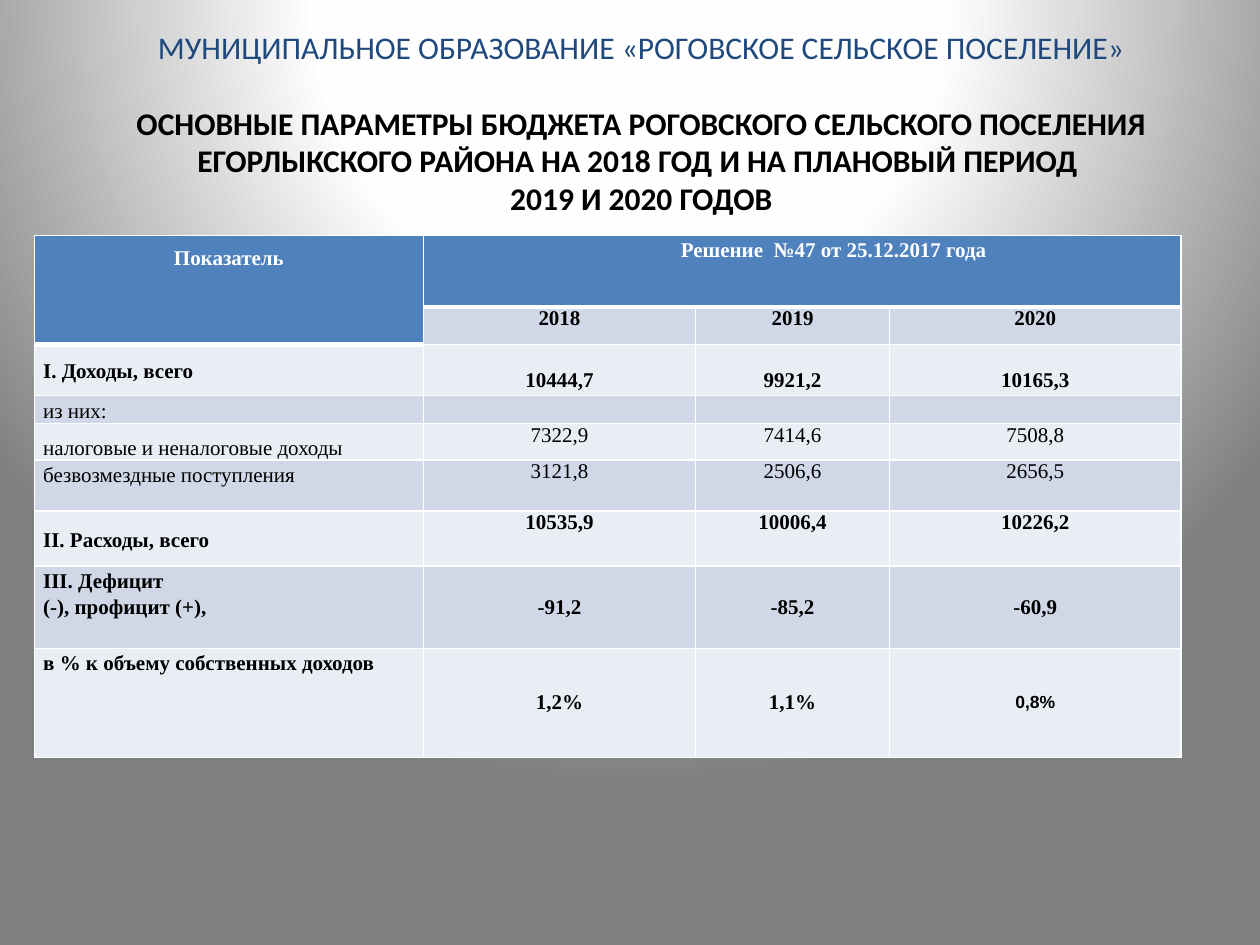
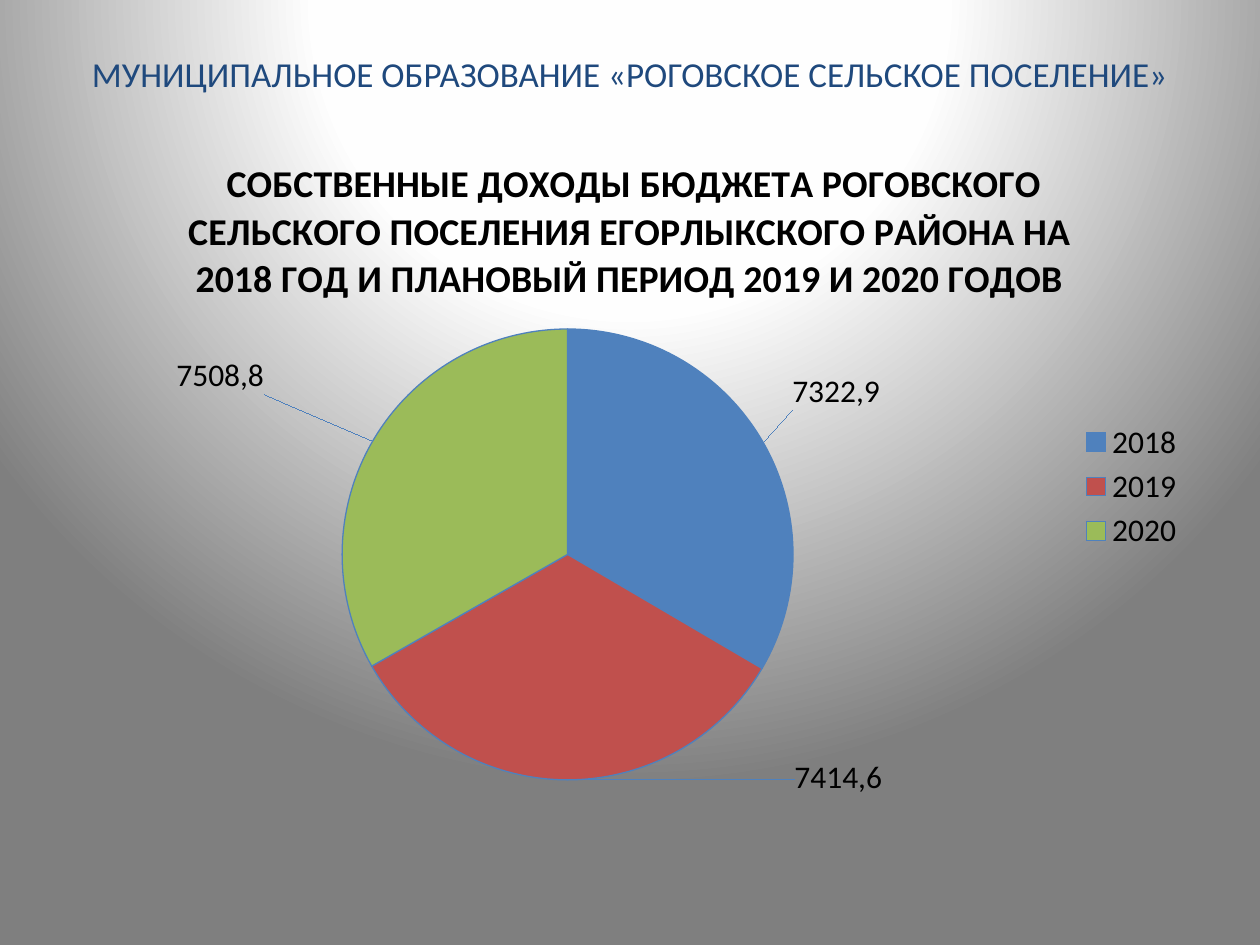
from dataclasses import dataclass

import lxml.etree
import pptx
import pptx.chart.data
import pptx.dml.color
import pptx.enum.chart
import pptx.enum.text
import pptx.oxml
import pptx.oxml.ns
import pptx.util

Pt = pptx.util.Pt
qn = pptx.oxml.ns.qn
Align = pptx.enum.text.PP_ALIGN
Anchor = pptx.enum.text.MSO_ANCHOR

HEX = {
    "navy": "1F497D", "black": "000000", "white": "FFFFFF", "blue": "4F81BD",
    "red": "C0504D", "green": "9BBB59", "band": "D0D8E8", "pale": "E9EDF4",
}
STOPS = ((0, "FFFFFF"), (40, "FEFEFE"), (100, "7F7F7F"))
PLACE = "МУНИЦИПАЛЬНОЕ ОБРАЗОВАНИЕ «РОГОВСКОЕ СЕЛЬСКОЕ ПОСЕЛЕНИЕ»"
BUDGET = (
    "ОСНОВНЫЕ ПАРАМЕТРЫ БЮДЖЕТА РОГОВСКОГО СЕЛЬСКОГО ПОСЕЛЕНИЯ "
    "ЕГОРЛЫКСКОГО РАЙОНА НА 2018 ГОД И НА ПЛАНОВЫЙ ПЕРИОД \v2019 И 2020 ГОДОВ"
)
INCOME = (
    " СОБСТВЕННЫЕ ДОХОДЫ БЮДЖЕТА РОГОВСКОГО СЕЛЬСКОГО ПОСЕЛЕНИЯ "
    "ЕГОРЛЫКСКОГО РАЙОНА НА 2018 ГОД И ПЛАНОВЫЙ ПЕРИОД 2019 И 2020 ГОДОВ"
)
YEARS = ("2018", "2019", "2020")
WIDTHS = (222.3, 155.5, 110.9, 166.5)
HEAD = 41


@dataclass
class Box:
    left: float
    top: float
    width: float
    height: float

    def pts(self) -> tuple:
        return tuple(Pt(v) for v in (self.left, self.top, self.width, self.height))


@dataclass
class Row:
    height: float
    label: str
    vals: tuple = ("", "", "")
    bold: bool = True
    side: Anchor = Anchor.TOP
    mid: Anchor = Anchor.TOP
    pad: float = 0


@dataclass
class Slice:
    year: str
    value: float
    label: str
    color: str
    dx: float
    dy: float


ROWS = (
    Row(21.5, "", YEARS),
    Row(29, "I. Доходы, всего", ("10444,7", "9921,2", "10165,3"), side=Anchor.MIDDLE, pad=13.8),
    Row(16, "из них:", bold=False, side=Anchor.MIDDLE),
    Row(21, "налоговые и неналоговые доходы", ("7322,9", "7414,6", "7508,8"), False, Anchor.BOTTOM),
    Row(29, "безвозмездные поступления", ("3121,8", "2506,6", "2656,5"), False),
    Row(31.5, "II. Расходы, всего", ("10535,9", "10006,4", "10226,2"), side=Anchor.MIDDLE),
    Row(47, "III. Дефицит\n(-), профицит (+),", ("-91,2", "-85,2", "-60,9"), mid=Anchor.MIDDLE),
    Row(62.5, "в % к объему собственных доходов", ("1,2%", "1,1%", "0,8%"), mid=Anchor.MIDDLE),
)
SLICES = (
    Slice("2018", 6847, "7322,9", "blue", 0.02, -0.04),
    Slice("2019", 6818, "7414,6", "red", 0.24, -0.04),
    Slice("2020", 6808, "7508,8", "green", -0.09, -0.06),
)


def rgb(name: str):
    return pptx.dml.color.RGBColor.from_string(HEX[name])


def style(font, size: float, color: str, bold: bool = False, face: str = "Calibri") -> None:
    font.size, font.bold, font.name = Pt(size), bold, face
    font.color.rgb = rgb(color)


def paint(master) -> None:
    stops = "".join(
        f'<a:gs pos="{pos * 1000}"><a:srgbClr val="{tone}"/></a:gs>' for pos, tone in STOPS
    )
    master.background.fill.solid()
    props = master.element.find(".//" + qn("p:bgPr"))
    props.remove(props[0])
    props.insert(0, pptx.oxml.parse_xml(
        f'<a:gradFill {pptx.oxml.ns.nsdecls("a")} rotWithShape="1"><a:gsLst>{stops}</a:gsLst>'
        '<a:path path="circle"><a:fillToRect l="50000" t="-80000" r="50000" b="180000"/>'
        "</a:path></a:gradFill>"
    ))


def start(deck, box: Box, size: float):
    slide = deck.slides.add_slide(deck.slide_layouts[5])
    title = slide.shapes.title
    title.left, title.top, title.width, title.height = box.pts()
    frame = title.text_frame
    frame.auto_size = pptx.enum.text.MSO_AUTO_SIZE.NONE
    frame.vertical_anchor = Anchor.MIDDLE
    frame.text = PLACE
    line = frame.paragraphs[0]
    line.alignment = Align.CENTER
    style(line.font, size, "navy")
    return slide


def edge(cell, base: float = 1) -> None:
    props = cell._tc.get_or_add_tcPr()
    for i, side in enumerate("LRTB"):
        width = Pt(base if side == "B" else 1)
        props.insert(i, pptx.oxml.parse_xml(
            f'<a:ln{side} {pptx.oxml.ns.nsdecls("a")} w="{width}"><a:solidFill>'
            f'<a:srgbClr val="{HEX["white"]}"/></a:solidFill></a:ln{side}>'
        ))


def write(cell, text: str, fill: str, color: str = "black", bold: bool = True,
          align: Align = Align.CENTER, anchor: Anchor = Anchor.TOP, space: float = 1,
          pad: float = 0, shift: float = 0, size: float = 12,
          face: str = "Times New Roman", base: float = 1) -> None:
    cell.text = text
    cell.margin_left, cell.margin_right = Pt(5 + shift), Pt(5)
    cell.margin_top, cell.margin_bottom = Pt(pad), Pt(0)
    cell.vertical_anchor = anchor
    cell.fill.solid()
    cell.fill.fore_color.rgb = rgb(fill)
    for line in cell.text_frame.paragraphs:
        line.alignment, line.line_spacing = align, space
        style(line.font, size, color, bold, face)
        if not text:
            end = lxml.etree.SubElement(line._p, qn("a:endParaRPr"))
            end.set("sz", str(size * 100))
    edge(cell, base)


def grid(slide) -> None:
    box = Box(19.7, 134.5, sum(WIDTHS), HEAD + sum(r.height for r in ROWS))
    table = slide.shapes.add_table(len(ROWS) + 1, len(WIDTHS), *box.pts()).table
    table.first_row = table.horz_banding = False
    for col, width in zip(table.columns, WIDTHS):
        col.width = Pt(width)
    for line, height in zip(table.rows, (HEAD, *(r.height for r in ROWS))):
        line.height = Pt(height)
    heads = ("Показатель", "Решение  №47 от 25.12.2017 года", "", "")
    for c, text in enumerate(heads):
        write(table.cell(0, c), text, "blue", "white", space=1.15 if c else 1.5,
              shift=36 if c else 0, base=3)
    for r, row in enumerate(ROWS, 1):
        fill = "band" if r % 2 else "pale"
        if row.label:
            write(table.cell(r, 0), row.label, fill, bold=row.bold, align=Align.LEFT,
                  anchor=row.side, space=1.15)
        for c, val in enumerate(row.vals, 1):
            write(table.cell(r, c), val, fill, bold=row.bold, anchor=row.mid, pad=row.pad)
    write(table.cell(1, 0), "", "blue", base=3)
    table.cell(0, 0).merge(table.cell(1, 0))
    table.cell(0, 1).merge(table.cell(0, 3))
    last = table.cell(len(ROWS), 3).text_frame.paragraphs[0]
    style(last.font, 10, "black", True, "Arial")


def layout(parent, index: int, **parts) -> None:
    for old in parent.findall(qn("c:layout")):
        parent.remove(old)
    body = "".join(f'<c:{key} val="{val}"/>' for key, val in parts.items())
    parent.insert(index, pptx.oxml.parse_xml(
        f'<c:layout {pptx.oxml.ns.nsdecls("c")}><c:manualLayout>{body}</c:manualLayout></c:layout>'
    ))


def trim(part) -> None:
    part.format.line.color.rgb = rgb("blue")
    part.format.line.width = Pt(0.75)


def pie(slide) -> None:
    data = pptx.chart.data.CategoryChartData()
    data.categories = [s.year for s in SLICES]
    data.add_series("Series 1", [s.value for s in SLICES])
    kind = pptx.enum.chart.XL_CHART_TYPE.PIE
    chart = slide.shapes.add_chart(kind, *Box(36, 73.5, 648, 409).pts(), data).chart
    style(chart.font, 18, "black")
    chart.has_title = True
    frame = chart.chart_title.text_frame
    frame.text = INCOME
    style(frame.paragraphs[0].font, 21.6, "black", True)
    chart.has_legend = True
    chart.legend.position = pptx.enum.chart.XL_LEGEND_POSITION.RIGHT
    chart.legend.include_in_layout = False
    plot = chart.plots[0]
    plot.vary_by_categories = True
    series = plot.series[0]
    trim(series)
    series.data_labels.show_value = True
    for i, part in enumerate(SLICES):
        point = series.points[i]
        point.format.fill.solid()
        point.format.fill.fore_color.rgb = rgb(part.color)
        trim(point)
        label = point.data_label
        label.text_frame.text = part.label
        style(label.text_frame.paragraphs[0].font, 18, "black")
        label.position = pptx.enum.chart.XL_LABEL_POSITION.OUTSIDE_END
        layout(label._dLbl, 1, x=part.dx, y=part.dy)
    area = chart._chartSpace.find(".//" + qn("c:plotArea"))
    layout(area, 0, layoutTarget="inner", xMode="edge", yMode="edge",
           x=0.24, y=0.28, w=0.41, h=0.63)


def main() -> None:
    deck = pptx.Presentation()
    deck.slide_width, deck.slide_height = Pt(720), Pt(540)
    paint(deck.slide_master)
    first = start(deck, Box(42.5, 13, 648, 114), 18)
    line = first.shapes.title.text_frame.add_paragraph()
    line.text = BUDGET
    line.alignment, line.space_before = Align.CENTER, Pt(21.5)
    style(line.font, 18, "black", True)
    grid(first)
    pie(start(deck, Box(36, 21.5, 648, 40.5), 20))
    deck.save("out.pptx")


if __name__ == "__main__":
    main()
